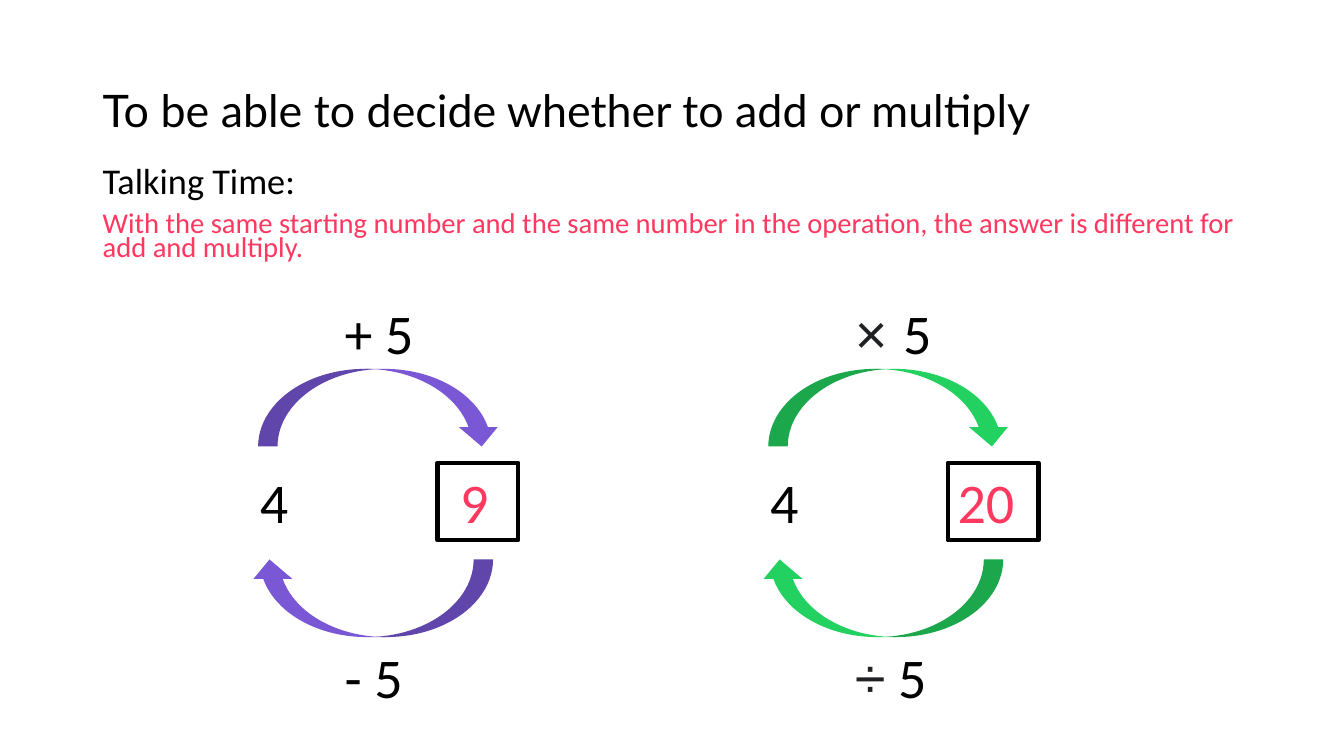
"""Build a slide that compares adding with multiplying through two inverse-operation cycles."""
from pptx import Presentation
from pptx.dml.color import RGBColor
from pptx.enum.shapes import MSO_SHAPE
from pptx.enum.text import MSO_ANCHOR, MSO_AUTO_SIZE, PP_ALIGN
from pptx.util import Inches, Pt

RECTANGLE = MSO_SHAPE.RECTANGLE
CURVED_ARROW = MSO_SHAPE.CURVED_DOWN_ARROW
TOP, MIDDLE = MSO_ANCHOR.TOP, MSO_ANCHOR.MIDDLE
LEFT = PP_ALIGN.LEFT
GROW, FIXED = MSO_AUTO_SIZE.SHAPE_TO_FIT_TEXT, MSO_AUTO_SIZE.NONE


def color(value):
    """Turn a hex string into a colour."""
    return RGBColor.from_string(value)


class CycleSlide:
    """Hold the style and the current slide."""

    black, symbol_gray, pink = "000000", "202124", "FF3860"
    font, title_font, symbol_font = "Calibri", "Lato", "Arial"
    number_size = 40
    row_height = 0.77

    def __init__(self, presentation):
        """Add a blank slide."""
        self.slide = presentation.slides.add_slide(presentation.slide_layouts[6])

    def text_run(self, paragraph, text, size, font, ink):
        """Add one run to a paragraph."""
        run = paragraph.add_run()
        run.text = text
        run.font.size = Pt(size)
        run.font.name = font
        run.font.color.rgb = color(ink)

    def text_box(self, left, top, width, height, paragraphs, anchor=TOP, spacing=1.0, gap=0, wrap=True):
        """Add a text box from lists of runs, one list per paragraph."""
        box = self.slide.shapes.add_textbox(Inches(left), Inches(top), Inches(width), Inches(height))
        frame = box.text_frame
        frame.word_wrap = wrap
        frame.auto_size = FIXED if wrap else GROW
        frame.vertical_anchor = anchor
        for index, runs in enumerate(paragraphs):
            paragraph = frame.add_paragraph() if index else frame.paragraphs[0]
            paragraph.line_spacing = spacing
            if index:
                paragraph.space_before = Pt(gap)
            for run in runs:
                self.text_run(paragraph, *run)

    def label(self, left, top, width, runs):
        """Add a large number or operation label."""
        sized_runs = [(text, self.number_size, font, ink) for text, font, ink in runs]
        self.text_box(left, top, width, self.row_height, [sized_runs], wrap=False)

    def answer_box(self, left, top, width, answer):
        """Add an outlined box with the answer."""
        shape = self.slide.shapes.add_shape(
            RECTANGLE, Inches(left), Inches(top), Inches(width), Inches(self.row_height))
        shape.shadow.inherit = False
        shape.fill.background()
        shape.line.color.rgb = color(self.black)
        shape.line.width = Pt(3)
        frame = shape.text_frame
        frame.word_wrap = True
        frame.auto_size = GROW
        frame.vertical_anchor = TOP
        paragraph = frame.paragraphs[0]
        paragraph.alignment = LEFT
        self.text_run(paragraph, answer, self.number_size, self.font, self.pink)

    def arrow(self, left, top, fill, rotation=0):
        """Add a curved arrow."""
        shape = self.slide.shapes.add_shape(
            CURVED_ARROW, Inches(left), Inches(top), Inches(2.41), Inches(self.row_height))
        shape.shadow.inherit = False
        shape.fill.solid()
        shape.fill.fore_color.rgb = color(fill)
        shape.line.fill.background()
        shape.rotation = rotation

    def cycle(self, left, fill, answer, answer_width, forward, inverse):
        """Add a start number, an answer and the two operations between them."""
        self.label(left, 4.59, 0.54, [("4", self.font, self.black)])
        self.answer_box(left + 1.86, 4.59, answer_width, answer)
        self.arrow(left + 0.08, 3.66, fill)
        self.arrow(left, 5.55, fill, 180)
        for top, (width, runs) in ((2.91, forward), (6.33, inverse)):
            self.label(left + 0.84, top, width, runs)


def main():
    """Create and save the presentation."""
    presentation = Presentation()
    presentation.slide_width = Inches(13.33)
    presentation.slide_height = Inches(7.5)
    page = CycleSlide(presentation)
    plain = (page.font, page.black)
    symbol = (page.symbol_font, page.symbol_gray)

    page.text_box(0.92, 0.4, 9.6, 1.45, [
        [("To be able to decide whether to add or multiply", 32, page.title_font, page.black)],
    ], anchor=MIDDLE, spacing=0.9)
    page.text_box(0.92, 1.64, 11.7, 1.12, [
        [("Talking Time:", 25.9, page.font, page.black)],
        [("With the same starting number and the same number in the operation, "
          "the answer is different for add and multiply.", 20.4, page.font, page.pink)],
    ], spacing=0.7, gap=10)

    page.cycle(2.48, "7957D5", " 9", 0.8,
               (1.02, [("+ 5", *plain)]),
               (0.93, [("- 5", *plain)]))
    page.cycle(7.54, "23D160", "20", 0.9,
               (1.02, [("× ", *symbol), ("5", *plain)]),
               (0.99, [("÷", *symbol), (" 5", *plain)]))
    presentation.save("out.pptx")


if __name__ == "__main__":
    main()
